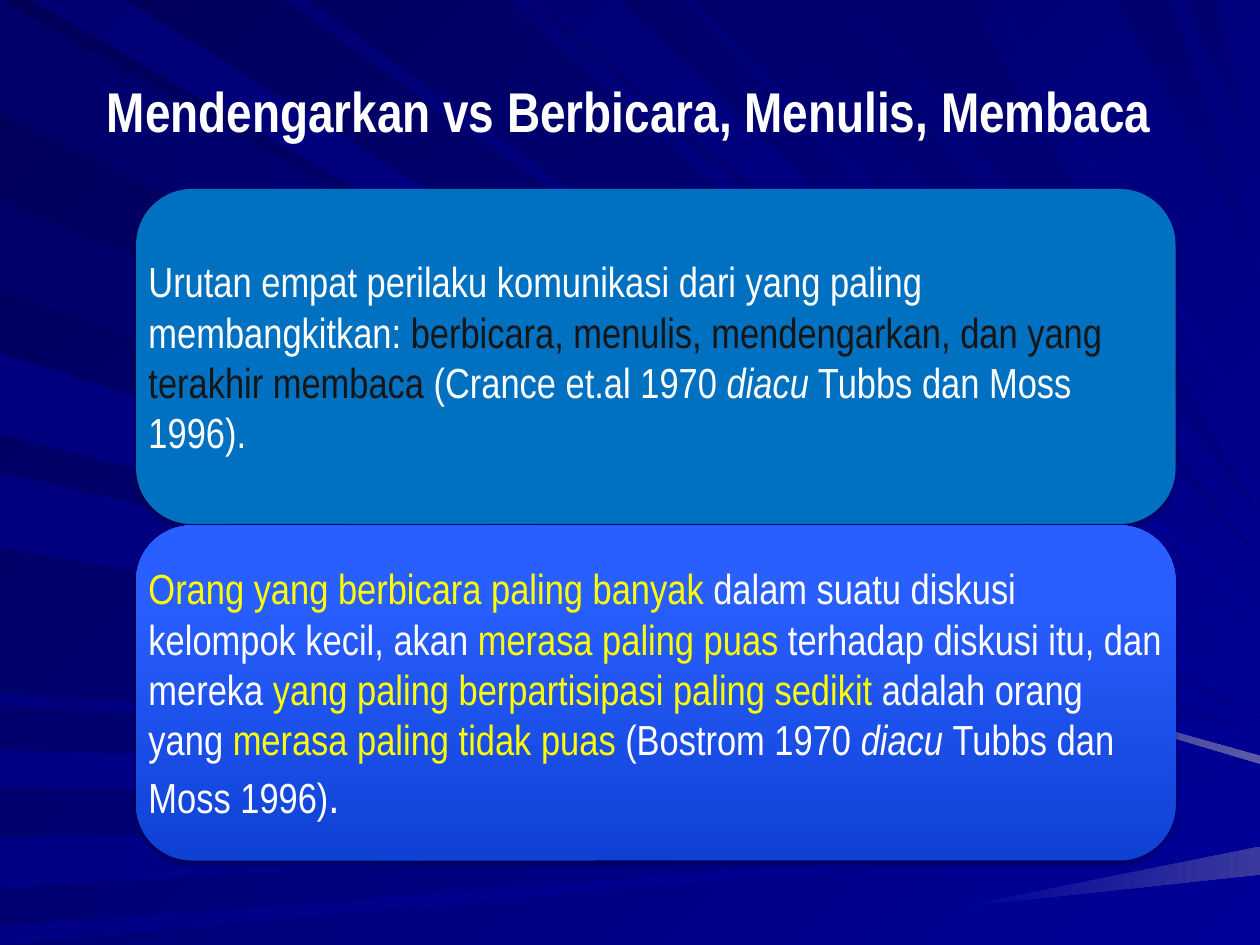
import pptx
import pptx.dml.color
import pptx.enum.shapes
import pptx.enum.text
import pptx.util
from lxml import etree

inches = pptx.util.Inches
W, H = 10, 7.5
FONT = "Arial Narrow"
WHITE, YELLOW, INK = "FFFFFF", "FFFF00", "161616"
NAVY, ROYAL = "000058", "000099"


def rgb(hex_colour):
    return pptx.dml.color.RGBColor.from_string(hex_colour)


def paint(fill, start, end, angle=0, end_position=1):
    """Fill with one colour, or blend two along a clockwise angle."""
    if start == end:
        fill.solid()
        fill.fore_color.rgb = rgb(start)
        return
    fill.gradient()
    fill.gradient_angle = -angle % 360
    for stop, colour, position in zip(fill.gradient_stops, (start, end), (0, end_position)):
        stop.color.rgb = rgb(colour)
        stop.position = position


deck = pptx.Presentation()
deck.slide_width, deck.slide_height = inches(W), inches(H)
slide = deck.slides.add_slide(deck.slide_layouts[5])
paint(slide.background.fill, NAVY, ROYAL, 45)

# Light rays run from the left or top edge to a tip on the right edge:
# start and width along the first edge, then height of the tip
ray_families = [
    ("left", "00006B", "000088", 0, [(0, 0.9, 5.7), (1.6, 0.7, 5.85)]),
    ("left", "00007E", ROYAL, 0, [(2.8, 0.65, 6), (3.75, 0.6, 6.05), (5.5, 0.1, 6.2)]),
    ("left", "000085", ROYAL, 0, [(5.95, 0.3, 6.3), (6.65, 0.4, 6.45), (7.35, 0.15, 6.6)]),
    ("top", "000075", ROYAL, 45, [(0.25, 0.75, 5.65), (2.25, 0.2, 5.5), (4, 0.2, 5.2),
                                  (4.25, 0.65, 4.9), (5.4, 0.1, 4.65), (7.85, 0.1, 3.55)]),
    ("top", "00006F", "000080", 90, [(6.05, 0.55, 4.45), (6.85, 0.85, 4.1),
                                     (8.85, 0.45, 2.1), (9.4, 0.25, 1.4)]),
]
triangles = []
for edge, start, end, angle, rays in ray_families:
    for near, width, tip in rays:
        ends = [(0, v) if edge == "left" else (v, 0) for v in (near, near + width)]
        triangles.append((start, end, angle, ends + [(W, tip)]))
triangles.append((ROYAL, "5A5AA6", 0, [(6.35, 4.98), (W, 6), (W, 6.06)]))
triangles.append((ROYAL, "39399E", 0, [(7.6, 7.2), (W, 6.72), (W, 6.94)]))

backdrop = slide.shapes.add_group_shape()
for start, end, angle, corners in triangles:
    points = [(inches(x), inches(y)) for x, y in corners]
    outline = backdrop.shapes.build_freeform(*points[0])
    outline.add_line_segments(points[1:], close=True)
    ray = outline.convert_to_shape()
    paint(ray.fill, start, end, angle)
    ray.line.fill.background()
    ray.shadow.inherit = False

title = slide.shapes.title
slide.shapes._spTree.append(title._element)  # in front of the rays
title.left, title.top, title.width, title.height = map(inches, (0.33, 0.25, 9.33, 1.25))
title.text_frame.text = "Mendengarkan vs Berbicara, Menulis, Membaca"
title.text_frame.vertical_anchor = pptx.enum.text.MSO_ANCHOR.MIDDLE
heading = title.text_frame.paragraphs[0]
heading.alignment = pptx.enum.text.PP_ALIGN.CENTER
heading_font = heading.runs[0].font
heading_font.name, heading_font.size, heading_font.bold = FONT, pptx.util.Pt(32), True
heading_font.color.rgb = rgb(WHITE)

# Statements: card colours, then phrases with their colours
statements = [
    ("0070C0", "0070C0", [
        ("Urutan empat perilaku komunikasi dari yang paling membangkitkan: ", WHITE),
        ("berbicara, menulis, mendengarkan, dan yang terakhir membaca ", INK),
        ("(Crance et.al 1970 ", WHITE),
        ("diacu", WHITE),
        (" Tubbs dan Moss 1996).", WHITE),
    ]),
    ("0F41D5", "295FFF", [
        ("Orang yang berbicara paling banyak ", YELLOW),
        ("dalam suatu diskusi kelompok kecil, akan ", WHITE),
        ("merasa paling puas ", YELLOW),
        ("terhadap diskusi itu, dan mereka ", WHITE),
        ("yang paling berpartisipasi paling sedikit", YELLOW),
        (" adalah orang yang ", WHITE),
        ("merasa paling tidak puas ", YELLOW),
        ("(Bostrom 1970 ", WHITE),
        ("diacu ", WHITE),
        ("Tubbs dan Moss 1996)", WHITE),
        (".", WHITE),
    ]),
]
SHADOW = (
    '<a:outerShdw xmlns:a="http://schemas.openxmlformats.org/drawingml/2006/main"'
    ' blurRad="39370" dist="22860" dir="5400000" rotWithShape="0">'
    '<a:srgbClr val="000000"><a:alpha val="35000"/></a:srgbClr></a:outerShdw>'
)
CARD_TOP, CARD_PITCH = 1.5, 2.67
for row, (start, end, phrases) in enumerate(statements):
    place = [inches(v) for v in (1.08, CARD_TOP + row * CARD_PITCH, 8.25, 2.66)]
    card = slide.shapes.add_shape(pptx.enum.shapes.MSO_SHAPE.ROUNDED_RECTANGLE, *place)
    paint(card.fill, start, end, 270, end_position=0.8)
    card.line.fill.background()
    card.shadow.inherit = False
    card._element.spPr.find("{*}effectLst").append(etree.fromstring(SHADOW))

    statement = slide.shapes.add_textbox(*place).text_frame
    statement.word_wrap = True
    statement.vertical_anchor = pptx.enum.text.MSO_ANCHOR.MIDDLE
    statement.margin_left = statement.margin_right = inches(0.1)
    statement.margin_top = statement.margin_bottom = inches(0.1)
    for text, colour in phrases:
        phrase = statement.paragraphs[0].add_run()
        phrase.text = text
        phrase.font.name = FONT
        phrase.font.size = pptx.util.Pt(28 if text == "." else 24)
        phrase.font.italic = text.strip() == "diacu"
        phrase.font.color.rgb = rgb(colour)

deck.save("out.pptx")
